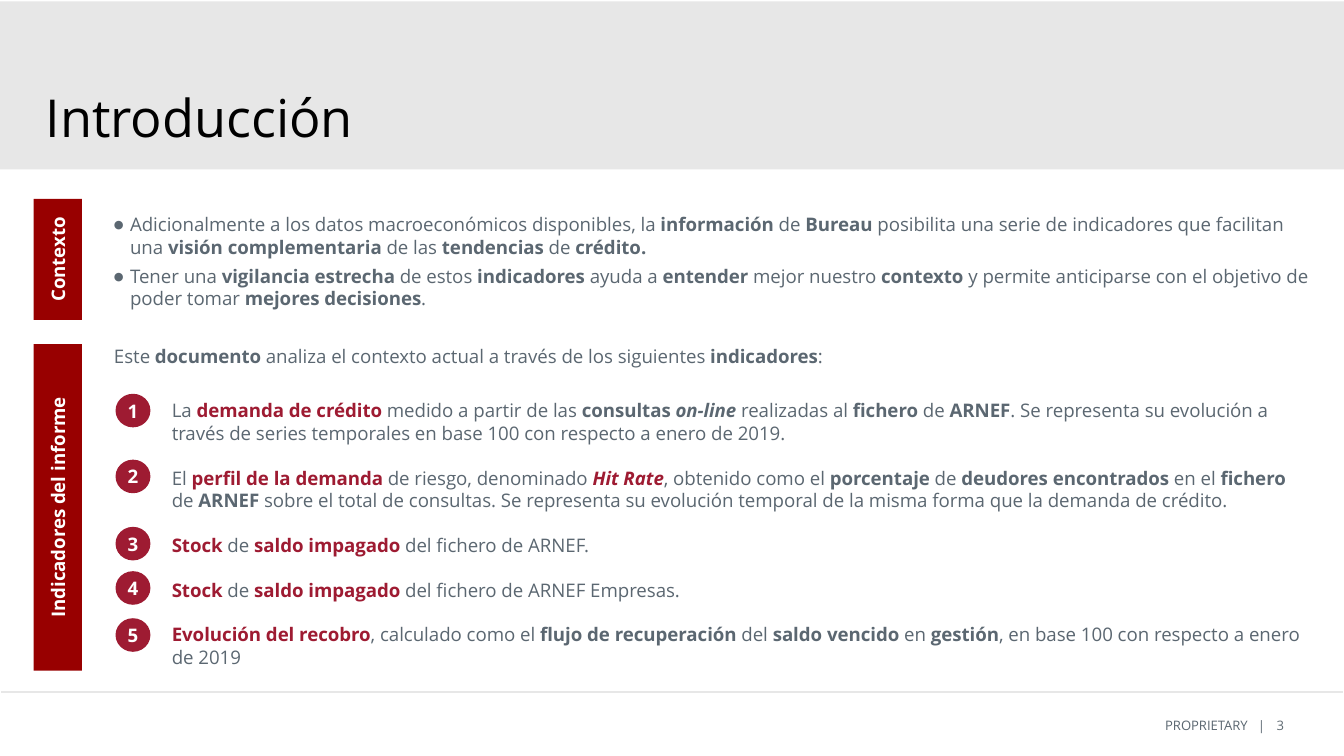
from typing import NamedTuple

from lxml.etree import SubElement
from pptx import Presentation
from pptx.dml.color import RGBColor
from pptx.enum.shapes import MSO_CONNECTOR, MSO_SHAPE
from pptx.enum.text import MSO_ANCHOR, PP_ALIGN
from pptx.oxml.ns import qn
from pptx.util import Inches, Pt

FONT = "Open Sans"
COLOURS = {
    "band": "E7E7E7",
    "body": "5B6771",
    "accent": "9E1B32",
    "label": "980000",
    "title": "000000",
    "number": "5F6A72",
    "white": "FFFFFF",
}


class Span(NamedTuple):
    text: str
    bold: bool = False
    italic: bool = False
    colour: str = "body"


class Box(NamedTuple):
    left: float
    top: float
    width: float
    height: float


class Section(NamedTuple):
    title: str
    top: float
    length: float


def strong(text: str, italic: bool = False) -> Span:
    """Return a bold span in the body colour."""
    return Span(text, True, italic)


def key(text: str, italic: bool = False) -> Span:
    """Return a bold span in the accent colour."""
    return Span(text, True, italic, "accent")


SECTIONS = [
    Section("Contexto", 1.48, 0.9),
    Section("Indicadores del informe", 2.56, 2.43),
]

CONTEXT = [
    [Span("Adicionalmente a los datos macroeconómicos disponibles, la "), strong("información "),
     Span("de "), strong("Bureau "),
     Span("posibilita una serie de indicadores que facilitan una "),
     strong("visión complementaria "), Span("de las "), strong("tendencias "),
     Span("de "), strong("crédito.")],
    [Span("Tener una "), strong("vigilancia estrecha"), Span(" de estos "), strong("indicadores "),
     Span("ayuda a "), strong("entender "), Span("mejor nuestro "), strong("contexto "),
     Span("y permite anticiparse con el objetivo de poder tomar "),
     strong("mejores decisiones"), Span(".")],
]

LEAD = [Span("Este "), strong("documento "),
        Span("analiza el contexto actual a través de los siguientes "),
        strong("indicadores"), Span(":")]

UNPAID_STOCK = [key("Stock "), Span("de "), key("saldo impagado ")]

INDICATORS = [
    [Span("La "), key("demanda de crédito"), Span(" medido a partir de las "),
     strong("consultas "), strong("on-line", italic=True), Span(" realizadas al "),
     strong("fichero "), Span("de "), strong("ARNEF"),
     Span(". Se representa su evolución a través de series temporales en base 100 "
          "con respecto a enero de 2019.")],
    [Span("El "), key("perfil de la demanda"), Span(" de riesgo, denominado "),
     key("Hit Rate", italic=True), Span(", obtenido como el "), strong("porcentaje "),
     Span("de "), strong("deudores encontrados "), Span("en el "), strong("fichero "),
     Span("de "), strong("ARNEF "),
     Span("sobre el total de consultas. Se representa su evolución temporal "
          "de la misma forma que la demanda de crédito.")],
    [*UNPAID_STOCK, Span("del fichero de ARNEF.")],
    [*UNPAID_STOCK, Span("del fichero de ARNEF Empresas.")],
    [key("Evolución del recobro"), Span(", calculado como el "),
     strong("flujo de recuperación"), Span(" del "), strong("saldo vencido "),
     Span("en "), strong("gestión"), Span(", en base 100 con respecto a enero de 2019")],
]
BADGE_TOPS = [2.93, 3.42, 3.92, 4.25, 4.6]


def write(frame, paragraphs: list, size: float = 10, gap: float = 0, align=PP_ALIGN.LEFT,
          anchor=MSO_ANCHOR.TOP, inset: float = 0.1, bullet: str = "") -> None:
    """Fill a text frame with paragraphs made of spans."""
    frame.word_wrap = True
    frame.vertical_anchor = anchor
    frame.margin_left = frame.margin_right = Inches(inset)
    frame.margin_top = frame.margin_bottom = Inches(0.1)
    for index, spans in enumerate(paragraphs):
        paragraph = frame.add_paragraph() if index else frame.paragraphs[0]
        paragraph.alignment = align
        if index:
            paragraph.space_before = Pt(gap)
        if bullet:
            add_bullet(paragraph, bullet)
        for span in spans:
            run = paragraph.add_run()
            run.text = span.text
            run.font.name = FONT
            run.font.size = Pt(size)
            run.font.bold = span.bold
            run.font.italic = span.italic
            run.font.color.rgb = RGBColor.from_string(COLOURS[span.colour])


def add_bullet(paragraph, character: str) -> None:
    """Give a paragraph a small hanging bullet in the body colour."""
    properties = paragraph._p.get_or_add_pPr()
    properties.set("marL", str(Inches(0.12)))
    properties.set("indent", str(-Inches(0.12)))
    colour = SubElement(properties, qn("a:buClr"))
    SubElement(colour, qn("a:srgbClr"), val=COLOURS["body"])
    SubElement(properties, qn("a:buSzPct"), val="60000")
    SubElement(properties, qn("a:buFont"), typeface=FONT)
    SubElement(properties, qn("a:buChar"), char=character)


def add_text(slide, box: Box, paragraphs: list, **style) -> None:
    """Add a text box with formatted paragraphs."""
    write(slide.shapes.add_textbox(*map(Inches, box)).text_frame, paragraphs, **style)


def add_block(slide, preset, box: Box, colour: str):
    """Add a flat filled shape without outline."""
    block = slide.shapes.add_shape(preset, *map(Inches, box))
    block.shadow.inherit = False
    block.fill.solid()
    block.fill.fore_color.rgb = RGBColor.from_string(COLOURS[colour])
    block.line.fill.background()
    return block


def add_section_label(slide, section: Section) -> None:
    """Add a section label that reads upwards."""
    centre, thickness = 0.43, 0.36
    box = Box(centre - section.length / 2, section.top + (section.length - thickness) / 2,
              section.length, thickness)
    label = add_block(slide, MSO_SHAPE.RECTANGLE, box, "label")
    label.rotation = 270
    write(label.text_frame, [[Span(section.title, True, colour="white")]],
          align=PP_ALIGN.CENTER, anchor=MSO_ANCHOR.MIDDLE)


def add_badge(slide, number: int, top: float) -> None:
    """Add the numbered circle of an indicator."""
    badge = add_block(slide, MSO_SHAPE.OVAL, Box(0.86, top, 0.26, 0.25), "accent")
    write(badge.text_frame, [[Span(str(number), True, colour="white")]],
          align=PP_ALIGN.CENTER, anchor=MSO_ANCHOR.MIDDLE, inset=0)


def add_footer(slide) -> None:
    """Add the footer rule, the notice and the page number."""
    rule = slide.shapes.add_connector(MSO_CONNECTOR.STRAIGHT, Inches(0.01), Inches(5.15),
                                      Inches(9.99), Inches(5.15))
    rule.line.color.rgb = RGBColor.from_string(COLOURS["band"])
    rule.line.width = Pt(0.75)
    SubElement(rule._element.spPr, qn("a:effectLst"))
    add_text(slide, Box(6.8, 5.18, 2.71, 0.43), [[Span("PROPRIETARY   |")]], size=7,
             align=PP_ALIGN.RIGHT, anchor=MSO_ANCHOR.MIDDLE)
    add_text(slide, Box(9.4, 5.18, 0.6, 0.43), [[Span("3", colour="number")]], size=7,
             anchor=MSO_ANCHOR.MIDDLE)


def main() -> None:
    """Build the introduction slide and save it."""
    deck = Presentation()
    deck.slide_width = Inches(10)
    deck.slide_height = Inches(10 * 9 / 16)
    slide = deck.slides.add_slide(deck.slide_layouts[6])
    add_block(slide, MSO_SHAPE.RECTANGLE, Box(0, 0.01, 10, 1.25), "band")
    add_footer(slide)
    add_text(slide, Box(0.34, 0.57, 9.32, 0.63), [[Span("Introducción", colour="title")]],
             size=28, anchor=MSO_ANCHOR.BOTTOM, inset=0)
    for section in SECTIONS:
        add_section_label(slide, section)
    add_text(slide, Box(0.75, 1.49, 9.13, 0.91), CONTEXT, gap=3.6,
             anchor=MSO_ANCHOR.MIDDLE, bullet="●")
    add_text(slide, Box(0.75, 2.48, 8.87, 0.43), [LEAD])
    add_text(slide, Box(1.18, 2.87, 8.63, 2.16), INDICATORS, gap=12)
    for number, top in enumerate(BADGE_TOPS, start=1):
        add_badge(slide, number, top)
    deck.save("out.pptx")


if __name__ == "__main__":
    main()
